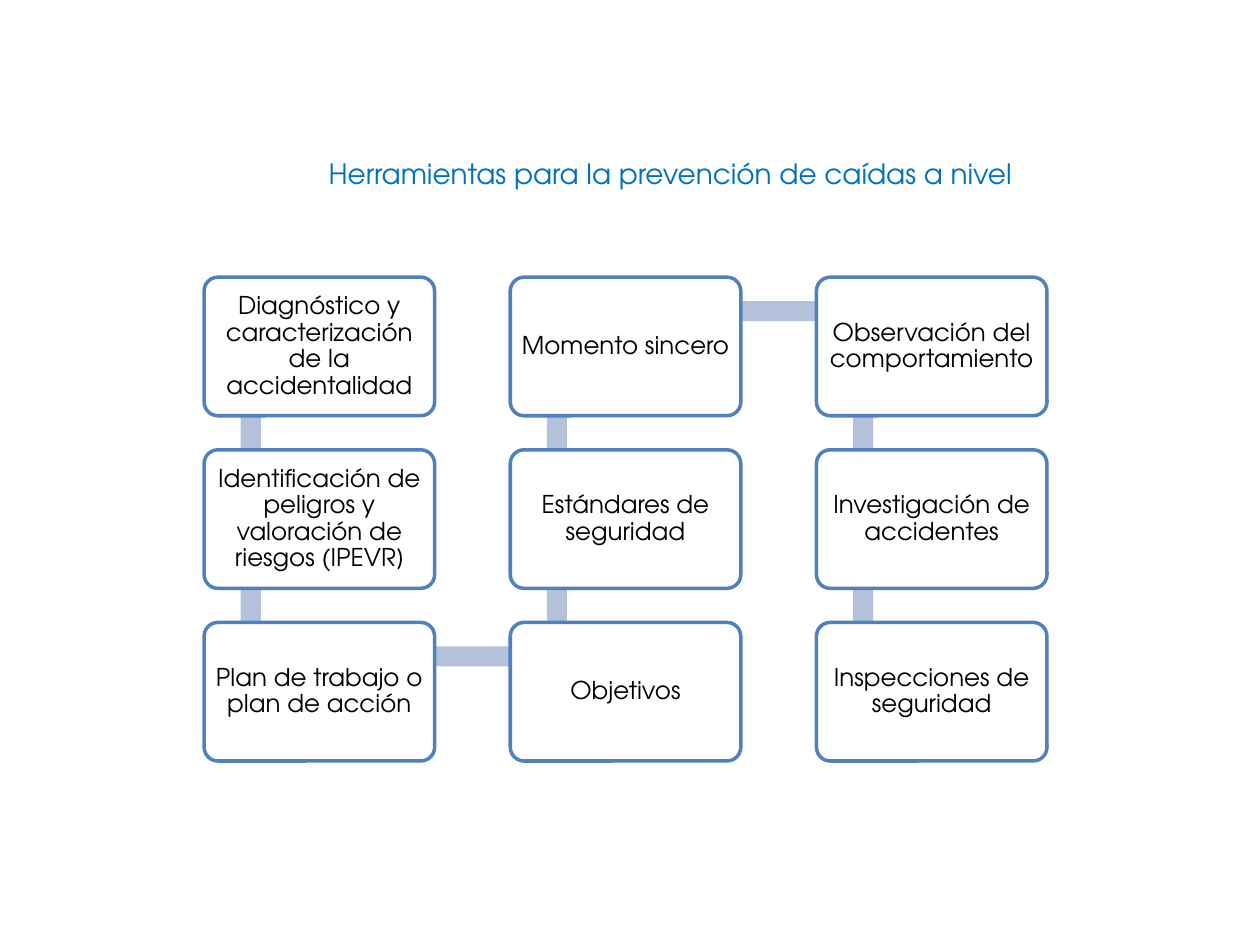
from dataclasses import dataclass
from itertools import pairwise

from pptx import Presentation
from pptx.dml.color import RGBColor
from pptx.enum.shapes import MSO_SHAPE as Shape
from pptx.enum.text import MSO_ANCHOR as Anchor, MSO_AUTO_SIZE as AutoSize, PP_ALIGN as Align
from pptx.util import Inches, Pt


@dataclass(frozen=True)
class Theme:
    title: RGBColor = RGBColor(0x00, 0x70, 0xC0)
    text: RGBColor = RGBColor(0x00, 0x00, 0x00)
    box: RGBColor = RGBColor(0xFF, 0xFF, 0xFF)
    outline: RGBColor = RGBColor(0x4F, 0x81, 0xBD)
    link: RGBColor = RGBColor(0xB3, 0xC1, 0xDB)
    font: str = "TeX Gyre Adventor"
    symbol_font: str = "Calibri"
    title_size: Pt = Pt(16)
    box_size: Pt = Pt(14)


theme = Theme()

# Steps in reading order: (column, row, text); the chain snakes down, up and down
steps = [
    (0, 0, "Diagnóstico y caracterización de la accidentalidad"),
    (0, 1, "Identificación de peligros y valoración de riesgos (IPEVR)"),
    (0, 2, "Plan de trabajo o plan de acción"),
    (1, 2, "Objetivos"),
    (1, 1, "Estándares de seguridad"),
    (1, 0, "Momento sincero"),
    (2, 0, "Observación del comportamiento"),
    (2, 1, "Investigación de accidentes"),
    (2, 2, "Inspecciones de seguridad"),
]
grid_left, grid_top = Inches(1.62), Inches(2.2)
column_pitch, row_pitch = Inches(2.43), Inches(1.37)
box_width, box_height = Inches(1.83), Inches(1.1)
joint_x, joint_y = Inches(0.37), Inches(0.27)
link_width = Inches(0.16)
box_margin = Inches(0.06)


def style_run(run, size, color, font=theme.font):
    run.font.name = font
    run.font.size = size
    run.font.color.rgb = color


presentation = Presentation()
presentation.slide_width = Inches(10)
presentation.slide_height = Inches(7.5)
slide = presentation.slides.add_slide(presentation.slide_layouts[6])

title = slide.shapes.add_textbox(Inches(2.51), Inches(1.19), Inches(5.81), Inches(0.64))
title_frame = title.text_frame
title_frame.word_wrap = True
title_frame.auto_size = AutoSize.SHAPE_TO_FIT_TEXT
title_frame.text = "Herramientas para la prevención de caídas a nivel"
title_frame.paragraphs[0].alignment = Align.JUSTIFY
style_run(title_frame.paragraphs[0].runs[0], theme.title_size, theme.title)

# Links run between the joints of consecutive boxes, and lie behind the boxes
joints = [
    (grid_left + column * column_pitch + joint_x, grid_top + row * row_pitch + joint_y)
    for column, row, _ in steps
]
for (start_x, start_y), (end_x, end_y) in pairwise(joints):
    length = abs(end_x - start_x) + abs(end_y - start_y)
    link = slide.shapes.add_shape(
        Shape.RECTANGLE,
        (start_x + end_x - length) // 2,
        (start_y + end_y - link_width) // 2,
        length,
        link_width,
    )
    if end_y != start_y:
        link.rotation = 90 if end_y > start_y else 270
    link.shadow.inherit = False
    link.fill.solid()
    link.fill.fore_color.rgb = theme.link
    link.line.fill.background()

for column, row, text in steps:
    box = slide.shapes.add_shape(
        Shape.ROUNDED_RECTANGLE,
        grid_left + column * column_pitch,
        grid_top + row * row_pitch,
        box_width,
        box_height,
    )
    box.adjustments[0] = 0.1
    box.shadow.inherit = False
    box.fill.solid()
    box.fill.fore_color.rgb = theme.box
    box.line.color.rgb = theme.outline
    box.line.width = Pt(2)

    frame = box.text_frame
    frame.word_wrap = True
    frame.vertical_anchor = Anchor.MIDDLE
    frame.margin_left = frame.margin_right = box_margin
    frame.margin_top = frame.margin_bottom = box_margin
    paragraph = frame.paragraphs[0]
    paragraph.text = text.removesuffix(")")
    paragraph.alignment = Align.CENTER
    paragraph.line_spacing = 0.9
    style_run(paragraph.runs[0], theme.box_size, theme.text)
    if text.endswith(")"):
        bracket = paragraph.add_run()
        bracket.text = ")"
        style_run(bracket, theme.box_size, theme.text, theme.symbol_font)

presentation.save("out.pptx")
